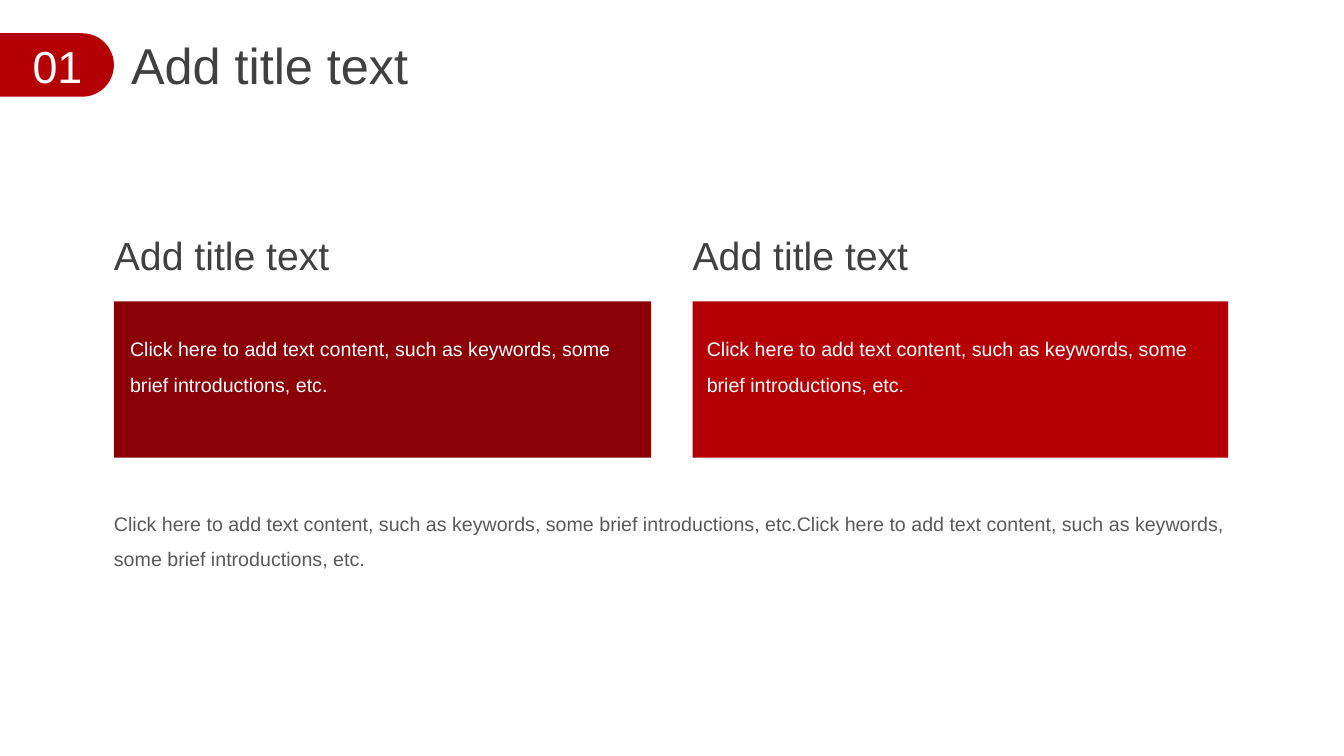
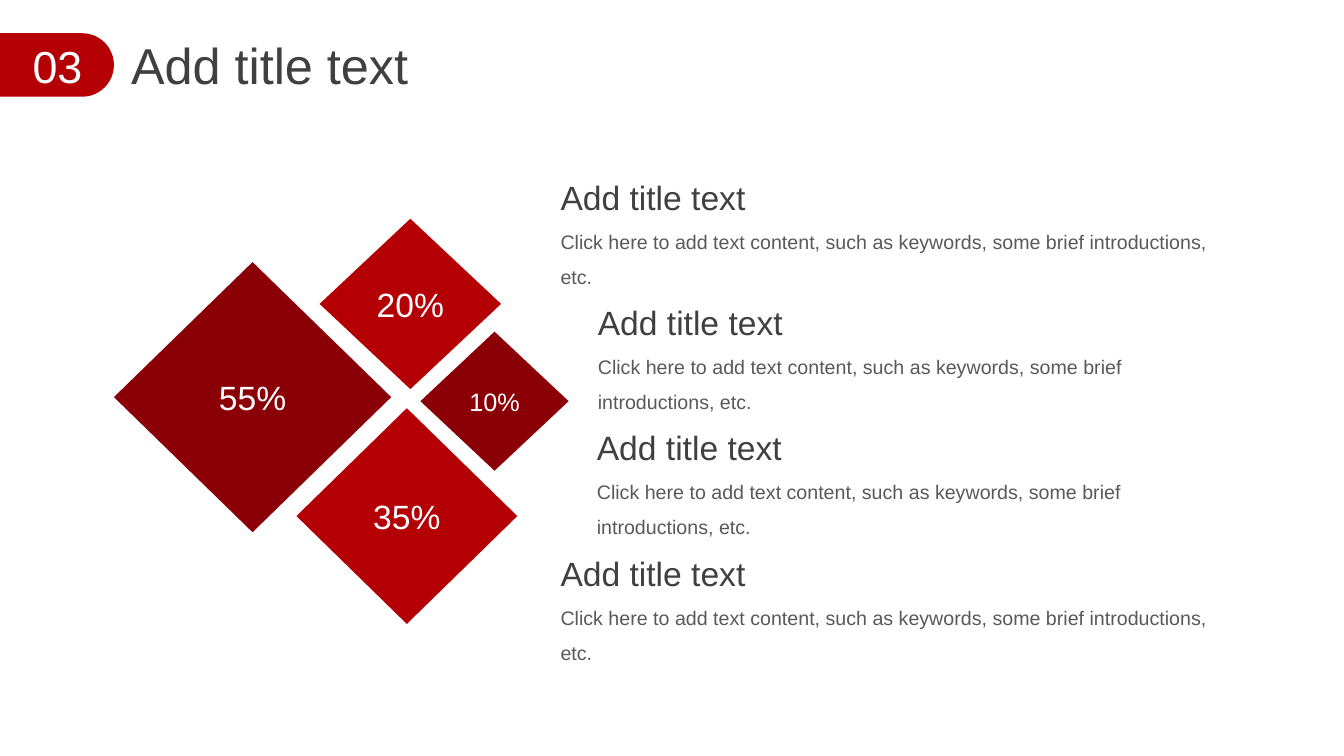
from dataclasses import dataclass

from pptx import Presentation
from pptx.dml.color import RGBColor
from pptx.enum.shapes import MSO_SHAPE as Shape
from pptx.enum.text import MSO_ANCHOR as Anchor, MSO_AUTO_SIZE as AutoSize, PP_ALIGN as Align
from pptx.util import Emu, Pt

EMU_PER_PX = 9144


@dataclass(frozen=True)
class Theme:
    font: str = "Arial"
    red: str = "B40005"
    dark_red: str = "8A0006"
    white: str = "FFFFFF"
    heading: str = "404040"
    body: str = "595959"
    title_size: int = 36
    number_size: int = 32
    card_size: int = 28
    item_size: int = 24
    small_size: int = 18
    body_size: int = 14


THEME = Theme()
HEADING = "Add title text"
BLURB = "Click here to add text content, such as keywords, some brief introductions, etc."


@dataclass(frozen=True)
class Box:
    left: int
    top: int
    width: int
    height: int

    def emu(self) -> tuple[Emu, ...]:
        return tuple(Emu(v * EMU_PER_PX) for v in (self.left, self.top, self.width, self.height))


@dataclass(frozen=True)
class Card:
    left: int
    width: int
    text_left: int
    fill: str


@dataclass(frozen=True)
class Diamond:
    label: str
    box: Box
    fill: str
    size: int = THEME.item_size


CARDS = (
    Card(113, 533, 129, THEME.dark_red),
    Card(687, 531, 701, THEME.red),
)
DIAMONDS = (
    Diamond("20%", Box(317, 217, 180, 169), THEME.red),
    Diamond("35%", Box(294, 405, 219, 214), THEME.red),
    Diamond("55%", Box(113, 260, 275, 268), THEME.dark_red),
    Diamond("10%", Box(417, 329, 147, 138), THEME.dark_red, THEME.small_size),
)
ITEM_LEFTS = (556, 593, 592, 556)
ITEM_TOP, ITEM_SPAN, ITEM_RIGHT = 176, 373, 1216


def write(sp, text: str, *, size: int, color: str, align=Align.LEFT, spacing: float = 1.0,
          anchor=Anchor.TOP, inset: tuple[int, int] = (0, 0), fit=AutoSize.SHAPE_TO_FIT_TEXT) -> None:
    tf = sp.text_frame
    tf.word_wrap = True
    tf.auto_size = fit
    tf.vertical_anchor = anchor
    tf.margin_left = tf.margin_right = Emu(inset[0] * EMU_PER_PX)
    tf.margin_top = tf.margin_bottom = Emu(inset[1] * EMU_PER_PX)
    p = tf.paragraphs[0]
    p.alignment = align
    p.line_spacing = spacing
    r = p.add_run()
    r.text = text
    r.font.name = THEME.font
    r.font.size = Pt(size)
    r.font.color.rgb = RGBColor.from_string(color)


def add_text(s, box: Box, text: str, **fmt) -> None:
    write(s.shapes.add_textbox(*box.emu()), text, **fmt)


def add_blurb(s, box: Box, text: str = BLURB, color: str = THEME.body) -> None:
    add_text(s, box, text, size=THEME.body_size, color=color, spacing=1.5)


def add_shape(s, kind: Shape, box: Box, fill: str):
    sp = s.shapes.add_shape(kind, *box.emu())
    sp.shadow.inherit = False
    sp.fill.solid()
    sp.fill.fore_color.rgb = RGBColor.from_string(fill)
    sp.line.fill.background()
    return sp


def add_slide(prs, number: str):
    s = prs.slides.add_slide(prs.slide_layouts[5])
    tab = add_shape(s, Shape.ROUND_2_SAME_RECTANGLE, Box(25, 8, 63, 113), THEME.red)
    tab.adjustments[0] = 0.5
    tab.adjustments[1] = 0
    tab.rotation = 90
    add_text(s, Box(24, 38, 66, 54), number, size=THEME.number_size, color=THEME.white, align=Align.CENTER)
    title = s.shapes.title
    title.left, title.top, title.width, title.height = Box(130, 34, 348, 61).emu()
    write(title, HEADING, size=THEME.title_size, color=THEME.heading, align=Align.JUSTIFY)
    return s


def build_cards(prs) -> None:
    s = add_slide(prs, "01")
    for card in CARDS:
        add_shape(s, Shape.RECTANGLE, Box(card.left, 299, card.width, 155), card.fill)
        add_text(s, Box(card.left, 229, 250, 47), HEADING, size=THEME.card_size, color=THEME.heading)
        add_blurb(s, Box(card.text_left, 323, 502, 66), color=THEME.white)
    add_blurb(s, Box(113, 496, 1105, 66), BLURB * 2)


def build_diamonds(prs) -> None:
    s = add_slide(prs, "03")
    for d in DIAMONDS:
        sp = add_shape(s, Shape.FLOWCHART_DECISION, d.box, d.fill)
        write(sp, d.label, size=d.size, color=THEME.white, align=Align.CENTER,
              anchor=Anchor.MIDDLE, inset=(10, 5), fit=AutoSize.NONE)
    for i, left in enumerate(ITEM_LEFTS):
        top = ITEM_TOP + i * ITEM_SPAN // (len(ITEM_LEFTS) - 1)
        add_text(s, Box(left, top, 216, 40), HEADING, size=THEME.item_size, color=THEME.heading)
        add_blurb(s, Box(left, top + 40, ITEM_RIGHT - left, 66))


def main() -> None:
    prs = Presentation()
    prs.slide_width, prs.slide_height = Box(0, 0, 1333, 750).emu()[2:]
    build_cards(prs)
    build_diamonds(prs)
    prs.save("out.pptx")


if __name__ == "__main__":
    main()
